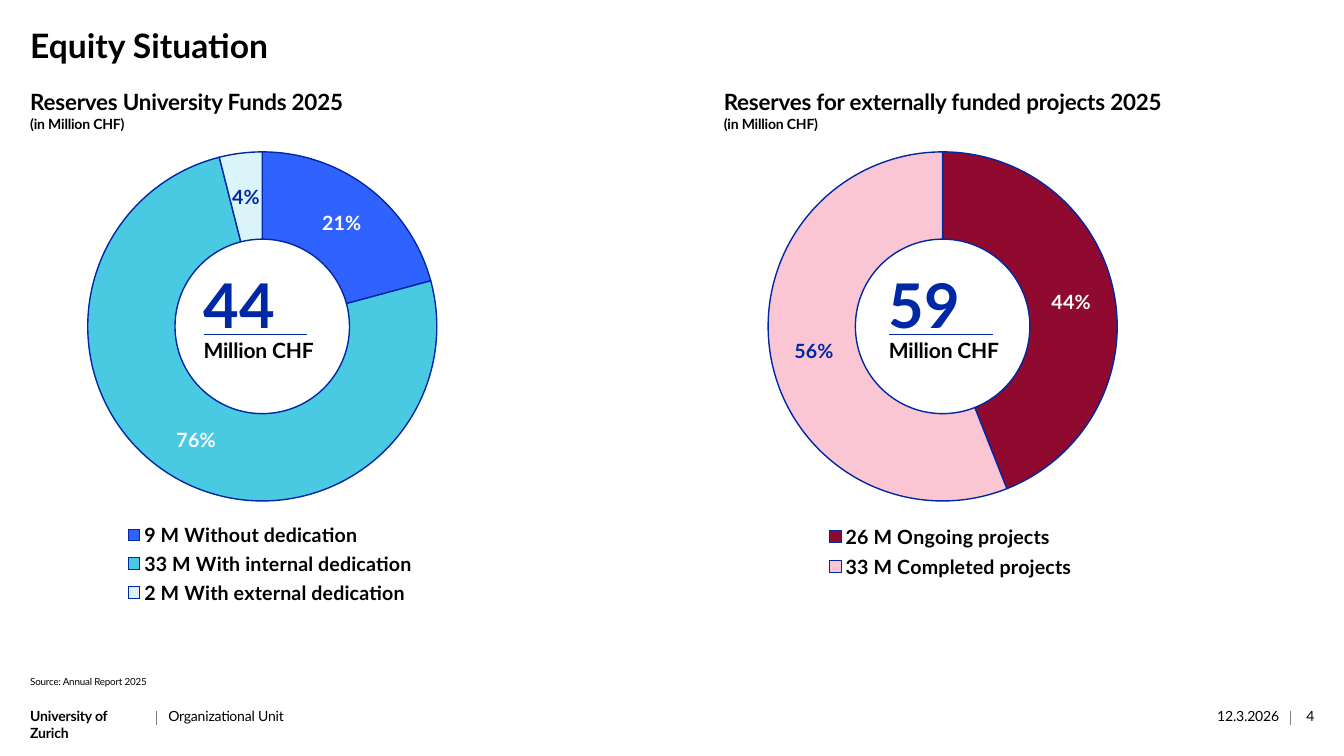
import pptx
import pptx.chart.data
import pptx.dml.color
import pptx.enum.chart
import pptx.enum.shapes
import pptx.enum.text
import pptx.oxml
import pptx.oxml.ns
import pptx.util
from lxml import etree

Pt = pptx.util.Pt
RGBColor = pptx.dml.color.RGBColor
ALIGN = pptx.enum.text.PP_ALIGN
qn = pptx.oxml.ns.qn

BLACK = RGBColor(0x00, 0x00, 0x00)
WHITE = RGBColor(0xFF, 0xFF, 0xFF)
GREY = RGBColor(0x80, 0x80, 0x80)
NAVY = RGBColor(0x00, 0x28, 0xA5)
BLUE = RGBColor(0x30, 0x62, 0xFF)
CYAN = RGBColor(0x4A, 0xC9, 0xE3)
PALE_CYAN = RGBColor(0xDB, 0xF4, 0xF9)
WINE = RGBColor(0x8F, 0x0A, 0x2E)
PINK = RGBColor(0xFB, 0xC6, 0xD4)

FONT = "Lato"
CHART_WIDTH, CHART_HEIGHT = 391, 430


def format_font(font, size, bold=False, color=BLACK):
    for key, value in {"name": FONT, "size": Pt(size), "bold": bold}.items():
        setattr(font, key, value)
    font.color.rgb = color


def fill_frame(frame, lines, align=ALIGN.LEFT, spacing=0.98):
    frame_format = {
        "margin_left": 0, "margin_top": 0, "margin_right": 0, "margin_bottom": 0,
        "word_wrap": True,
        "auto_size": pptx.enum.text.MSO_AUTO_SIZE.NONE,
        "vertical_anchor": pptx.enum.text.MSO_ANCHOR.TOP,
    }
    for key, value in frame_format.items():
        setattr(frame, key, value)
    for index, (wording, size, bold, color) in enumerate(lines):
        paragraph = frame.add_paragraph() if index else frame.paragraphs[0]
        paragraph.alignment = align
        paragraph.line_spacing = spacing
        run = paragraph.add_run()
        run.text = wording
        format_font(run.font, size, bold, color)


def add_label(slide, box, lines, align=ALIGN.LEFT):
    label = slide.shapes.add_textbox(*map(Pt, box))
    fill_frame(label.text_frame, lines, align)
    for paragraph in label.text_frame.paragraphs:
        for run in paragraph.runs:
            run.font._element.set("spc", "-10")


def add_rule(slide, start, end, color, width):
    rule = slide.shapes.add_connector(
        pptx.enum.shapes.MSO_CONNECTOR.STRAIGHT, *map(Pt, start + end))
    rule.line.color.rgb = color
    rule.line.width = Pt(width)
    etree.SubElement(rule._element.spPr, qn("a:effectLst"))


def make_layout(box, inner=False):
    layout = etree.Element(qn("c:layout"))
    manual = etree.SubElement(layout, qn("c:manualLayout"))
    settings = [("layoutTarget", "inner")] if inner else []
    settings += [("xMode", "edge"), ("yMode", "edge")]
    settings += zip("xywh", box)
    for tag, value in settings:
        etree.SubElement(manual, qn(f"c:{tag}")).set("val", str(value))
    return layout


def place_chart_parts(chart, entry_count):
    plot_area = chart._chartSpace.chart.plotArea
    legend = chart.legend._element
    for part in (plot_area, legend):
        for layout in part.findall(qn("c:layout")):
            part.remove(layout)
    plot_area.insert(0, make_layout((0.002, 0.121, 0.807, 0.58), inner=True))
    legend_box = (0.1, 0.73, 0.64, round(0.02 + 0.044 * entry_count, 2))
    legend.find(qn("c:legendPos")).addnext(make_layout(legend_box))


def add_doughnut(slide, left, top, slices):
    data = pptx.chart.data.CategoryChartData(number_format='0"%"')
    data.categories = [name for name, *_ in slices]
    data.add_series("Series 1", [share for _, share, *_ in slices])
    chart = slide.shapes.add_chart(
        pptx.enum.chart.XL_CHART_TYPE.DOUGHNUT,
        *map(Pt, (left, top, CHART_WIDTH, CHART_HEIGHT)), data).chart
    format_font(chart.font, 10)
    chart.has_title = False
    chart.has_legend = True
    chart.legend.position = pptx.enum.chart.XL_LEGEND_POSITION.LEFT
    chart.legend.include_in_layout = False
    format_font(chart.legend.font, 14, True)
    place_chart_parts(chart, len(slices))

    plot = chart.plots[0]
    plot.vary_by_categories = True
    plot._element.find(qn("c:holeSize")).set("val", "70")
    plot.has_data_labels = True
    plot.data_labels.show_value = True
    plot.data_labels.show_percentage = False
    plot.data_labels.number_format_is_linked = True
    format_font(plot.data_labels.font, 14, True)
    for index, (_, _, color, label_color) in enumerate(slices):
        point = plot.series[0].points[index]
        point.format.fill.solid()
        point.format.fill.fore_color.rgb = color
        point.format.line.color.rgb = NAVY
        point.format.line.width = Pt(1)
        format_font(point.data_label.font, 14, True, label_color)


def add_reserves_panel(slide, box, heading, total, slices, chart_shift, total_shift):
    left, top, width, height = box
    add_doughnut(slide, left + chart_shift, top - 7.5, slices)
    add_label(slide, (left, top, width, height),
              [(heading, 16, True, BLACK), ("(in Million CHF)", 10, True, BLACK)])
    total_left = left + total_shift
    add_label(slide, (total_left, top + 129, 74, 57), [(total, 44, True, NAVY)])
    add_label(slide, (total_left, top + 178, 94, 28), [("Million CHF", 15, True, BLACK)])
    rule_top = top + 175
    add_rule(slide, (total_left, rule_top), (total_left + 74, rule_top), NAVY, 1.25)


def add_title(slide, box):
    title = slide.shapes.title
    for key, value in zip(("left", "top", "width", "height"), box):
        setattr(title, key, Pt(value))
    fill_frame(title.text_frame, [("Equity Situation", 24, True, BLACK)], spacing=0.97)


def add_footer(slide, box):
    left, top, width, height = box
    right = left + width
    entries = [
        ("University of Zurich", left, 84, True, ALIGN.LEFT),
        ("Organizational Unit", left + 98.6, 624, False, ALIGN.LEFT),
        ("12.3.2026", right - 118.8, 93.6, False, ALIGN.RIGHT),
        ("4", right - 16.5, 16.5, False, ALIGN.RIGHT),
    ]
    for wording, entry_left, entry_width, bold, align in entries:
        add_label(slide, (entry_left, top, entry_width, height),
                  [(wording, 10, bold, BLACK)], align)
    for divider in (left + 90, right - 17.4):
        add_rule(slide, (divider, top + 1.5), (divider, top + 11.5), GREY, 0.5)


def main():
    deck = pptx.Presentation()
    deck.slide_width, deck.slide_height = Pt(960), Pt(540)
    slide = deck.slides.add_slide(deck.slide_layouts[5])
    add_title(slide, (21.6, 19.5, 917.3, 41.8))
    add_reserves_panel(
        slide, (21.6, 64, 296, 31), "Reserves University Funds 2025", "44",
        [("9 M Without dedication", 21, BLUE, WHITE),
         ("33 M With internal dedication", 76, CYAN, WHITE),
         ("2 M With external dedication", 4, PALE_CYAN, NAVY)],
        chart_shift=7.2, total_shift=123.8)
    add_reserves_panel(
        slide, (517, 64, 382, 31), "Reserves for externally funded projects 2025", "59",
        [("26 M Ongoing projects", 44, WINE, WHITE),
         ("33 M Completed projects", 56, PINK, NAVY)],
        chart_shift=-2.2, total_shift=118)
    add_label(slide, (21.6, 483, 288, 9), [("Source: Annual Report 2025", 7, False, BLACK)])
    add_footer(slide, (21.6, 506.2, 917.3, 24))
    deck.save("out.pptx")


if __name__ == "__main__":
    main()
